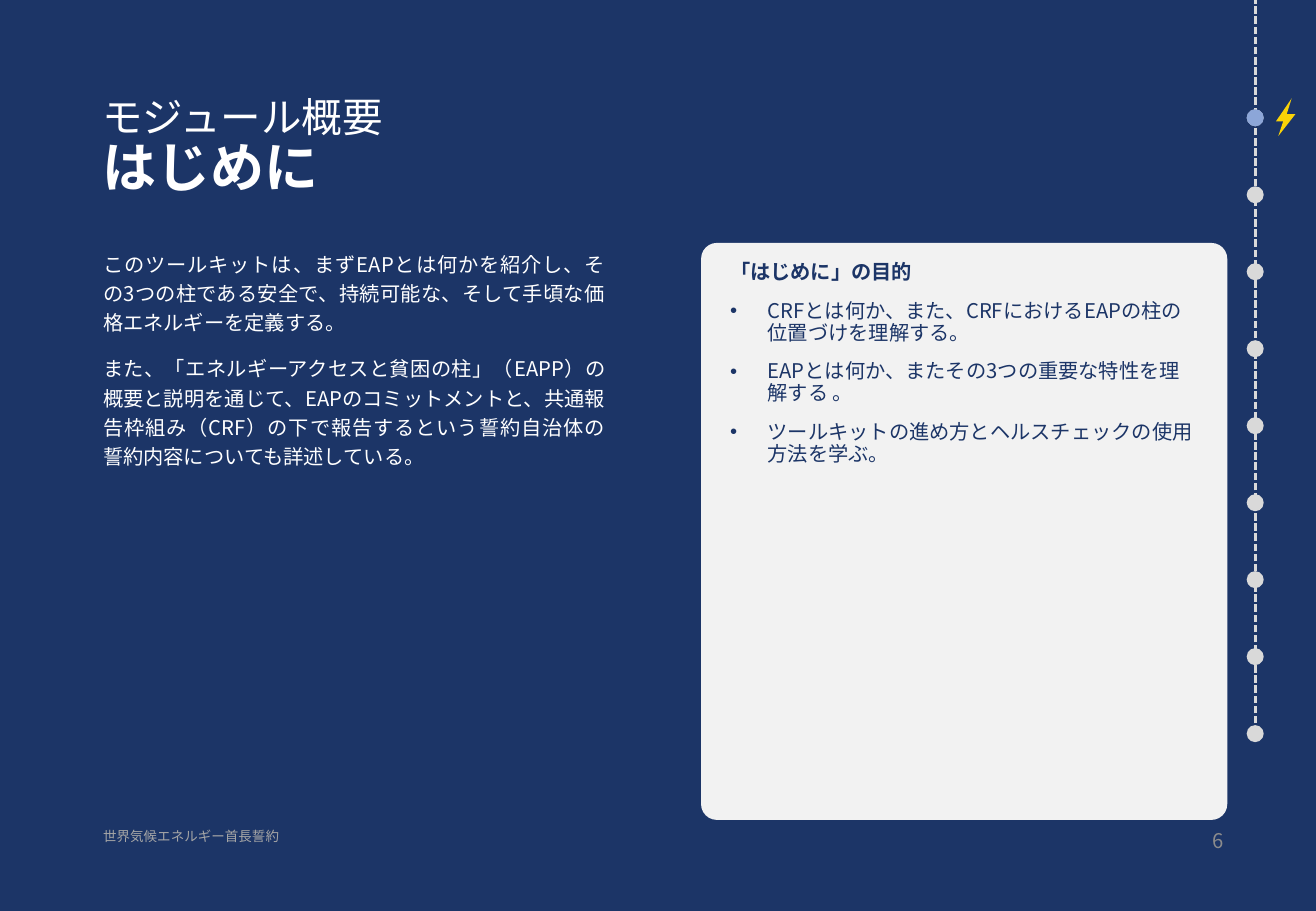
"""Build the module overview slide with its progress timeline."""
from copy import deepcopy

from lxml.etree import SubElement
from pptx import Presentation
from pptx.dml.color import RGBColor
from pptx.enum.dml import MSO_LINE
from pptx.enum.lang import MSO_LANGUAGE_ID
from pptx.enum.shapes import MSO_CONNECTOR, MSO_SHAPE
from pptx.enum.text import MSO_ANCHOR, PP_ALIGN
from pptx.oxml.ns import qn
from pptx.util import Inches, Pt

FONT = "Noto Sans CJK JP"
COLORS = {
    "navy": "1C3567", "white": "FFFFFF", "panel": "F2F2F2", "track": "D9D9D9",
    "footer": "A6A6A6", "number": "8C8C8C", "bolt": "FAD307",
    "halo": "C3D2EF", "current": "4C78CE",
}
INTRO = [
    "このツールキットは、まずEAPとは何かを紹介し、その3つの柱である安全で、持続可能な、そして手頃な価格エネルギーを定義する。",
    "また、「エネルギーアクセスと貧困の柱」（EAPP）の概要と説明を通じて、EAPのコミットメントと、共通報告枠組み（CRF）の下で報告するという誓約自治体の誓約内容についても詳述している。",
]
GOALS_HEADING = "「はじめに」の目的"
GOALS = [
    "CRFとは何か、また、CRFにおけるEAPの柱の位置づけを理解する。",
    "EAPとは何か、またその3つの重要な特性を理解する 。",
    "ツールキットの進め方とヘルスチェックの使用方法を学ぶ。",
]
TRACK_X, DOT_SIZE, DOT_COUNT = 10.33, 0.14, 9
FIRST_DOT, LAST_DOT = 0.97, 6.04
BOLT_HALVES = [
    [(10.57, 1), (10.5, 1), (10.63, 0.81), (10.58, 0.97)],
    [(10.58, 0.94), (10.66, 0.94), (10.52, 1.12), (10.57, 0.97)],
]


def color(name):
    return RGBColor.from_string(COLORS[name])


def style_font(font, size, color_name, bold=False):
    """Apply typeface, size, colour and weight to a paragraph or run font."""
    font.name = FONT
    font.size = Pt(size)
    font.bold = bold
    font.language_id = MSO_LANGUAGE_ID.JAPANESE
    font.fill.solid()
    font.fill.fore_color.rgb = color(color_name)
    SubElement(font._element, qn("a:ea"), typeface=FONT)


def paint(shape, color_name, alpha=None):
    """Give a shape a flat fill without outline or shadow."""
    shape.shadow.inherit = False
    shape.line.fill.background()
    shape.fill.solid()
    shape.fill.fore_color.rgb = color(color_name)
    if alpha is not None:
        tint = shape.fill._xPr.find(f".//{qn('a:srgbClr')}")
        SubElement(tint, qn("a:alpha"), val=str(alpha * 1000))


def add_bullet(para):
    """Set a hanging bullet on a paragraph."""
    properties = para._p.get_or_add_pPr()
    properties.set("marL", str(Inches(0.31)))
    properties.set("indent", str(-Inches(0.31)))
    SubElement(properties, qn("a:buFont"), typeface="Arial")
    SubElement(properties, qn("a:buChar"), char="•")


def fill_text(frame, texts, size, color_name, spacing=1.0,
              align=PP_ALIGN.LEFT, headed=False):
    """Write paragraphs; a headed list has a bold heading, then bullets."""
    frame.word_wrap = True
    frame.vertical_anchor = MSO_ANCHOR.TOP
    for index, text in enumerate(texts):
        para = frame.add_paragraph() if index else frame.paragraphs[0]
        para.text = text
        para.alignment = align
        para.line_spacing = spacing
        if index:
            para.space_before = Pt(10)
            if headed:
                add_bullet(para)
        style_font(para.font, size, color_name, headed and index == 0)


def add_text(page, left, top, width, height, texts, size, color_name, **options):
    box = page.shapes.add_textbox(
        Inches(left), Inches(top), Inches(width), Inches(height))
    fill_text(box.text_frame, texts, size, color_name, **options)


def add_title(page):
    """Place the two-line title in its placeholder."""
    title = page.shapes.title
    title.left, title.top = Inches(0.74), Inches(0.75)
    title.width, title.height = Inches(9.34), Inches(1.08)
    title.text_frame.vertical_anchor = MSO_ANCHOR.TOP
    para = title.text_frame.paragraphs[0]
    para.alignment = PP_ALIGN.LEFT
    para.line_spacing = 0.9
    para.text = "モジュール概要\vはじめに"
    module, name = para.runs
    style_font(module.font, 24, "white")
    style_font(name.font, 32, "white", bold=True)
    para._p.find(qn("a:br")).insert(0, deepcopy(module.font._element))


def add_goals_panel(page):
    panel = page.shapes.add_shape(
        MSO_SHAPE.ROUNDED_RECTANGLE,
        Inches(5.77), Inches(2), Inches(4.33), Inches(4.75))
    panel.adjustments[0] = 0.03
    paint(panel, "panel")
    frame = panel.text_frame
    frame.margin_left = frame.margin_right = Inches(0.2)
    frame.margin_top = frame.margin_bottom = Inches(0.12)
    fill_text(frame, [GOALS_HEADING, *GOALS], 12, "navy", 0.9, headed=True)


def add_dot(page, center_y, color_name, alpha=None):
    dot = page.shapes.add_shape(
        MSO_SHAPE.OVAL,
        Inches(TRACK_X - DOT_SIZE / 2), Inches(center_y - DOT_SIZE / 2),
        Inches(DOT_SIZE), Inches(DOT_SIZE))
    paint(dot, color_name, alpha)


def add_timeline(page):
    """Draw the dashed track, its evenly spaced dots and the current step."""
    track = page.shapes.add_connector(
        MSO_CONNECTOR.STRAIGHT,
        Inches(TRACK_X), Inches(LAST_DOT), Inches(TRACK_X), Inches(0))
    track.line.color.rgb = color("track")
    track.line.width = Pt(1.5)
    track.line.dash_style = MSO_LINE.SQUARE_DOT
    SubElement(track._element.spPr, qn("a:effectLst"))
    gap = (LAST_DOT - FIRST_DOT) / (DOT_COUNT - 1)
    for index in range(DOT_COUNT):
        add_dot(page, FIRST_DOT + index * gap, "track")
    for color_name in ("halo", "current"):
        add_dot(page, FIRST_DOT, color_name, alpha=50)


def add_bolt(page):
    for half in BOLT_HALVES:
        start, *rest = [(Inches(x), Inches(y)) for x, y in half]
        builder = page.shapes.build_freeform(*start)
        builder.add_line_segments(rest, close=True)
        paint(builder.convert_to_shape(), "bolt")


def main():
    deck = Presentation()
    deck.slide_width, deck.slide_height = Inches(10.83), Inches(7.5)
    page = deck.slides.add_slide(deck.slide_layouts[5])
    page.background.fill.solid()
    page.background.fill.fore_color.rgb = color("navy")
    add_title(page)
    add_text(page, 0.75, 1.99, 4.33, 4.76, INTRO, 12, "white",
             spacing=1.2, align=PP_ALIGN.JUSTIFY)
    add_goals_panel(page)
    add_timeline(page)
    add_bolt(page)
    add_text(page, 0.75, 6.77, 1.83, 0.4, ["世界気候エネルギー首長誓約"], 8, "footer")
    add_text(page, 9.58, 6.77, 0.59, 0.4, ["6"], 12, "number",
             align=PP_ALIGN.RIGHT)
    deck.save("out.pptx")


if __name__ == "__main__":
    main()
